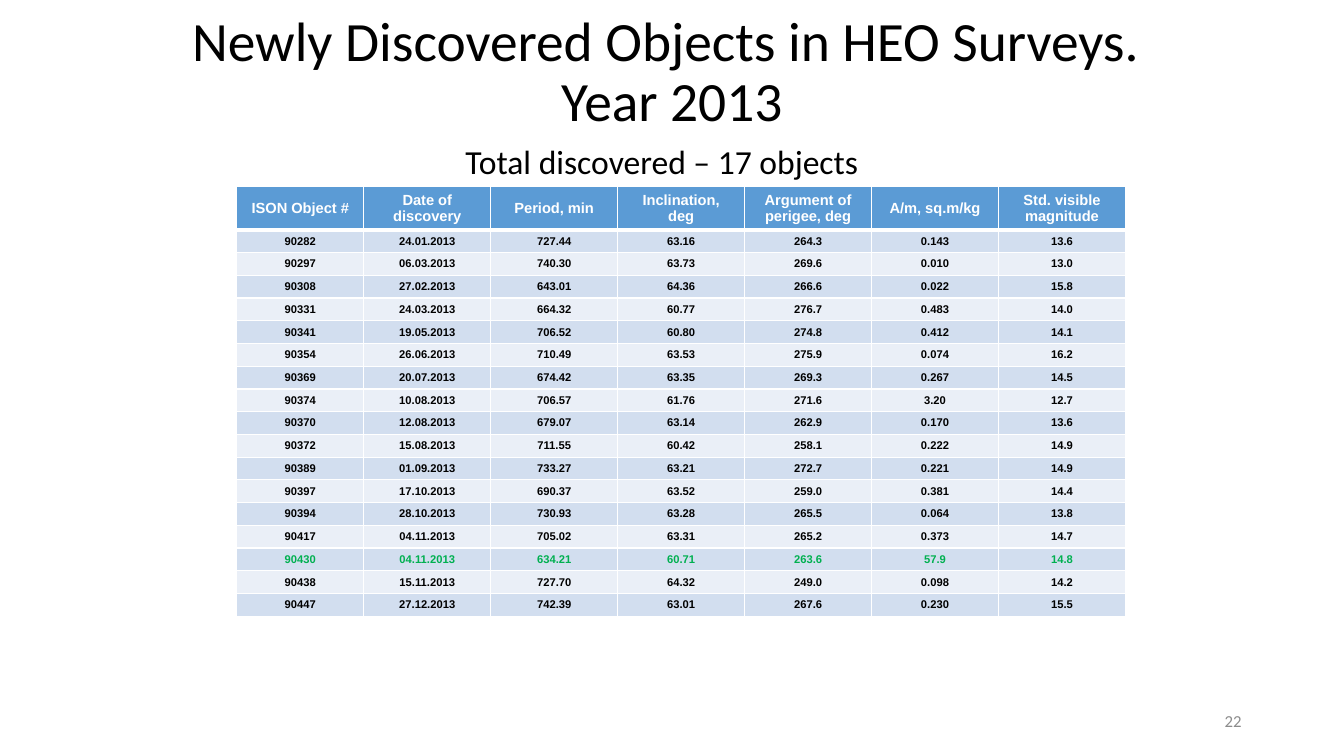
from lxml import etree
from pptx import Presentation
from pptx.dml.color import RGBColor
from pptx.enum.text import MSO_ANCHOR, PP_ALIGN
from pptx.oxml.ns import qn
from pptx.util import Cm, Pt

CENTER, RIGHT, LEFT = PP_ALIGN.CENTER, PP_ALIGN.RIGHT, PP_ALIGN.LEFT
MIDDLE, TOP = MSO_ANCHOR.MIDDLE, MSO_ANCHOR.TOP

BLACK = RGBColor(0x00, 0x00, 0x00)
WHITE = RGBColor(0xFF, 0xFF, 0xFF)
GREY = RGBColor(0x8C, 0x8C, 0x8C)
GREEN = RGBColor(0x00, 0xB0, 0x50)
HEADER_BLUE = RGBColor(0x5B, 0x9B, 0xD5)
BANDS = (RGBColor(0xD2, 0xDE, 0xEF), RGBColor(0xEA, 0xEF, 0xF7))

# Content
TITLE = "Newly Discovered Objects in HEO Surveys. \vYear 2013"
TOTAL = "Total discovered – 17 objects"
PAGE_NUMBER = "22"
HIGHLIGHTED_OBJECT = "90430"
HEADINGS = ("ISON Object #", "Date of discovery", "Period, min", "Inclination, deg",
            "Argument of perigee, deg", "A/m, sq.m/kg", "Std. visible magnitude")
OBJECTS = [
    ("90282", "24.01.2013", "727.44", "63.16", "264.3", "0.143", "13.6"),
    ("90297", "06.03.2013", "740.30", "63.73", "269.6", "0.010", "13.0"),
    ("90308", "27.02.2013", "643.01", "64.36", "266.6", "0.022", "15.8"),
    ("90331", "24.03.2013", "664.32", "60.77", "276.7", "0.483", "14.0"),
    ("90341", "19.05.2013", "706.52", "60.80", "274.8", "0.412", "14.1"),
    ("90354", "26.06.2013", "710.49", "63.53", "275.9", "0.074", "16.2"),
    ("90369", "20.07.2013", "674.42", "63.35", "269.3", "0.267", "14.5"),
    ("90374", "10.08.2013", "706.57", "61.76", "271.6", "3.20", "12.7"),
    ("90370", "12.08.2013", "679.07", "63.14", "262.9", "0.170", "13.6"),
    ("90372", "15.08.2013", "711.55", "60.42", "258.1", "0.222", "14.9"),
    ("90389", "01.09.2013", "733.27", "63.21", "272.7", "0.221", "14.9"),
    ("90397", "17.10.2013", "690.37", "63.52", "259.0", "0.381", "14.4"),
    ("90394", "28.10.2013", "730.93", "63.28", "265.5", "0.064", "13.8"),
    ("90417", "04.11.2013", "705.02", "63.31", "265.2", "0.373", "14.7"),
    ("90430", "04.11.2013", "634.21", "60.71", "263.6", "57.9", "14.8"),
    ("90438", "15.11.2013", "727.70", "64.32", "249.0", "0.098", "14.2"),
    ("90447", "27.12.2013", "742.39", "63.01", "267.6", "0.230", "15.5"),
]

# Table measures
TABLE_LEFT, TABLE_TOP, TABLE_WIDTH = Cm(5.97), Cm(4.7), Cm(22.4)
HEADER_HEIGHT, BODY_HEIGHT = Cm(1.08), Cm(9.75)


def set_font(paragraph, name, size, color, bold=False):
    font = paragraph.font
    font.name, font.size, font.bold = name, Pt(size), bold
    font.color.rgb = color


def add_text(slide, box, text, size, color, align, anchor, wrap=True):
    frame = slide.shapes.add_textbox(*(Cm(length) for length in box)).text_frame
    frame.word_wrap = wrap
    frame.vertical_anchor = anchor
    paragraph = frame.paragraphs[0]
    paragraph.text = text
    paragraph.alignment = align
    set_font(paragraph, "Calibri", size, color)
    return paragraph


def set_borders(cell, top, bottom):
    properties = cell._tc.get_or_add_tcPr()
    for side, width in (("L", 1), ("R", 1), ("T", top), ("B", bottom)):
        line = etree.SubElement(properties, qn(f"a:ln{side}"), w=str(Pt(width)))
        fill = etree.SubElement(line, qn("a:solidFill"))
        etree.SubElement(fill, qn("a:srgbClr"), val=str(WHITE))


def fill_row(table, row, values, size, color, fill):
    for column, value in enumerate(values):
        cell = table.cell(row, column)
        set_borders(cell, top=3 if row == 1 else 1, bottom=3 if row == 0 else 1)
        cell.fill.solid()
        cell.fill.fore_color.rgb = fill
        cell.vertical_anchor = MIDDLE
        cell.margin_top = cell.margin_bottom = Cm(0.1)
        paragraph = cell.text_frame.paragraphs[0]
        paragraph.text = value
        paragraph.alignment = CENTER
        set_font(paragraph, "Arial", size, color, bold=True)


def add_object_table(slide):
    table = slide.shapes.add_table(
        len(OBJECTS) + 1, len(HEADINGS), TABLE_LEFT, TABLE_TOP,
        TABLE_WIDTH, HEADER_HEIGHT + BODY_HEIGHT).table
    for column in table.columns:
        column.width = TABLE_WIDTH // len(HEADINGS)
    for row in table.rows:
        row.height = BODY_HEIGHT // len(OBJECTS)
    table.rows[0].height = HEADER_HEIGHT

    fill_row(table, 0, HEADINGS, 10.5, WHITE, HEADER_BLUE)
    for index, values in enumerate(OBJECTS):
        color = GREEN if values[0] == HIGHLIGHTED_OBJECT else BLACK
        fill_row(table, index + 1, values, 8, color, BANDS[index % 2])


def main():
    deck = Presentation()
    deck.slide_width, deck.slide_height = Cm(33.87), Cm(19.05)
    slide = deck.slides.add_slide(deck.slide_layouts[6])

    # Title and page number
    title = add_text(slide, (2.33, 0.56, 29.21, 2.6), TITLE, 39.6, BLACK, CENTER, MIDDLE)
    title.line_spacing = 0.9
    add_text(slide, (23.92, 17.66, 7.62, 1.01), PAGE_NUMBER, 12, GREY, RIGHT, MIDDLE)

    # Table with its total above
    add_object_table(slide)
    add_text(slide, (11.48, 3.43, 10.52, 1.28), TOTAL, 24, BLACK, LEFT, TOP, wrap=False)

    deck.save("out.pptx")


if __name__ == "__main__":
    main()
